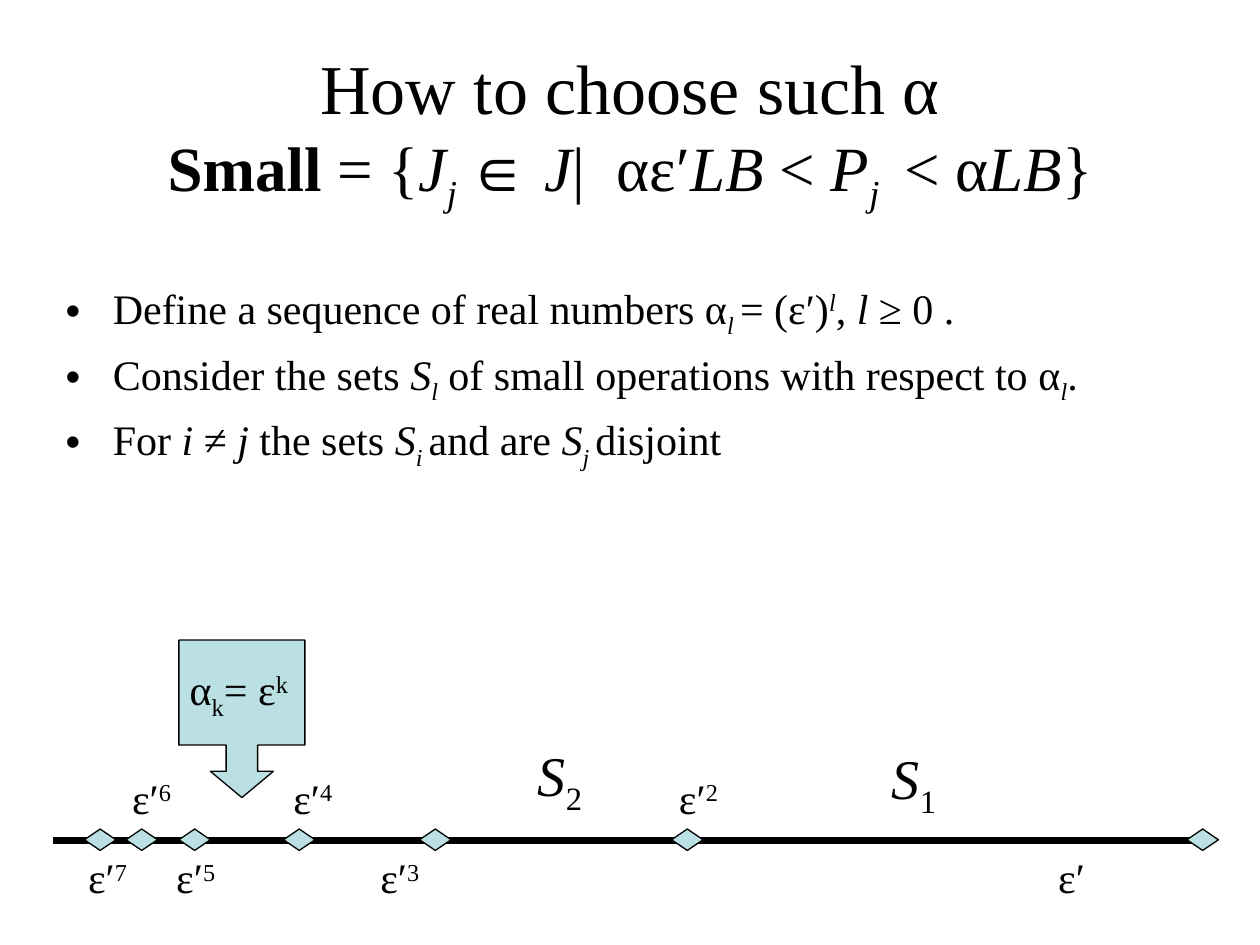
from lxml import etree
from pptx import Presentation
from pptx.dml.color import RGBColor
from pptx.enum.shapes import MSO_CONNECTOR, MSO_SHAPE
from pptx.enum.text import MSO_ANCHOR, MSO_AUTO_SIZE, PP_ALIGN
from pptx.oxml.ns import qn
from pptx.util import Inches, Pt

BLACK = RGBColor(0x00, 0x00, 0x00)
PALE_TEAL = RGBColor(0xBB, 0xE0, 0xE3)
SERIF = "Times New Roman"
STRAIGHT = MSO_CONNECTOR.STRAIGHT
DIAMOND = MSO_SHAPE.FLOWCHART_DECISION
CALLOUT = MSO_SHAPE.DOWN_ARROW_CALLOUT
MIDDLE, TOP = MSO_ANCHOR.MIDDLE, MSO_ANCHOR.TOP
CENTER, LEFT = PP_ALIGN.CENTER, PP_ALIGN.LEFT
NO_FIT = MSO_AUTO_SIZE.NONE
SUB, SUP = -25, 30
INSET = 0.1

FORMULA = [("Small ", {"bold": True}), ("= {", {}), ("J", {"italic": True}),
           ("j ", {"italic": True, "base": SUB}), ("∈ ", {}),
           ("J", {"italic": True}), ("|  αε′", {}), ("LB", {"italic": True}),
           (" < ", {}), ("P", {"italic": True}),
           ("j ", {"italic": True, "base": SUB}), (" < α", {}),
           ("LB", {"italic": True}), ("}", {})]
BULLETS = [
    [("Define a sequence of real numbers α", {}),
     ("l ", {"italic": True, "base": SUB}), ("= (ε′)", {}),
     ("l", {"italic": True, "base": SUP}), (", ", {}),
     ("l", {"italic": True}), (" ≥ 0 .", {})],
    [("Consider the sets ", {}), ("S", {"italic": True}),
     ("l", {"italic": True, "base": SUB}),
     (" of small operations with respect to α", {}),
     ("l", {"italic": True, "base": SUB}), (".", {})],
    [("For ", {}), ("i ", {"italic": True}), ("≠ ", {}),
     ("j", {"italic": True}), (" the sets ", {}), ("S", {"italic": True}),
     ("i ", {"italic": True, "base": SUB}), ("and are ", {}),
     ("S", {"italic": True}), ("j ", {"italic": True, "base": SUB}),
     ("disjoint", {})],
]
MARKS = [0, 0.33, 0.75, 1.58, 2.66, 4.66, 8.75]
LABELS_ABOVE = [("6", 1.05), ("4", 2.33), ("2", 5.39)]
LABELS_BELOW = [("7", 0.7), ("5", 1.4), ("3", 3.02), ("", 8.4)]


def add_run(paragraph, text, size=24, bold=False, italic=False, base=0):
    """Append one formatted run, raised or lowered by base percent."""
    run = paragraph.add_run()
    run.text = text
    run.font.name = SERIF
    run.font.size = Pt(size)
    run.font.bold = bold
    run.font.italic = italic
    run.font.color.rgb = BLACK
    if base:
        run.font._element.set("baseline", str(base * 1000))


def add_runs(paragraph, parts, size=24):
    """Append a list of (text, format) parts."""
    for text, style in parts:
        add_run(paragraph, text, size, **style)


def place(shape, left, top, width, height):
    """Move a placeholder to a box given in inches."""
    shape.left, shape.top = Inches(left), Inches(top)
    shape.width, shape.height = Inches(width), Inches(height)


def fill_title(title, left, top, width, height):
    """Write the heading and the definition of the small set."""
    place(title, left, top, width, height)
    frame = title.text_frame
    frame.auto_size = NO_FIT
    frame.vertical_anchor = MIDDLE
    paragraph = frame.paragraphs[0]
    paragraph.alignment = CENTER
    add_run(paragraph, "How to choose such α", 40)
    paragraph.add_line_break()
    add_runs(paragraph, FORMULA, 36)


def fill_body(body, left, top, width, height):
    """Write the bullet list."""
    place(body, left, top, width, height)
    frame = body.text_frame
    frame.auto_size = NO_FIT
    frame.vertical_anchor = TOP
    frame.margin_top = Inches(0.49)
    for index, parts in enumerate(BULLETS):
        paragraph = frame.add_paragraph() if index else frame.paragraphs[0]
        add_runs(paragraph, parts)


def add_label(slide, left, top, width, height, parts, size=24):
    """Add a short label whose text starts at left."""
    box = slide.shapes.add_textbox(Inches(left - INSET), Inches(top),
                                   Inches(width), Inches(height))
    box.text_frame.word_wrap = False
    paragraph = box.text_frame.paragraphs[0]
    paragraph.alignment = LEFT
    add_runs(paragraph, parts, size)


def add_filled_shape(slide, kind, left, top, width, height):
    """Add a pale teal shape with a thin black outline."""
    shape = slide.shapes.add_shape(kind, Inches(left), Inches(top),
                                   Inches(width), Inches(height))
    shape.shadow.inherit = False
    shape.fill.solid()
    shape.fill.fore_color.rgb = PALE_TEAL
    shape.line.color.rgb = BLACK
    shape.line.width = Pt(0.75)
    return shape


def add_number_line(slide, left, top, width):
    """Draw the axis, its marks, and the labels around it."""
    axis = slide.shapes.add_connector(STRAIGHT, Inches(left), Inches(top),
                                      Inches(left + width), Inches(top))
    axis.line.color.rgb = BLACK
    axis.line.width = Pt(4)
    etree.SubElement(axis._element.spPr, qn("a:effectLst"))
    for offset in MARKS:
        add_filled_shape(slide, DIAMOND, left + 0.25 + offset, top - 0.09,
                         0.25, 0.17)
    for labels, label_top in ((LABELS_ABOVE, top - 0.59),
                              (LABELS_BELOW, top + 0.04)):
        for power, label_left in labels:
            parts = [("ε′", {})]
            if power:
                parts.append((power, {"base": SUP}))
            add_label(slide, label_left, label_top, 0.55, 0.5, parts)
    for number, label_left, label_top in (("1", 7.08, top - 0.82),
                                          ("2", 4.27, top - 0.84)):
        add_label(slide, label_left, label_top, 0.57, 0.63,
                  [("S", {"italic": True}), (number, {"base": SUB})], 32)


def add_alpha_callout(slide, left, top, width, height):
    """Add the arrow callout that points at the chosen interval."""
    callout = add_filled_shape(slide, CALLOUT, left, top, width, height)
    for index, value in enumerate((0.25, 0.25, 0.208, 0.667)):
        callout.adjustments[index] = value
    frame = callout.text_frame
    frame.word_wrap = False
    frame.vertical_anchor = MIDDLE
    paragraph = frame.paragraphs[0]
    paragraph.alignment = CENTER
    add_runs(paragraph, [("α", {}), ("k", {"base": SUB}), ("= ε", {}),
                         ("k ", {"base": SUP})])


def main():
    """Build the slide and save it."""
    deck = Presentation()
    deck.slide_width, deck.slide_height = Inches(10), Inches(7.5)
    slide = deck.slides.add_slide(deck.slide_layouts[1])
    fill_title(slide.shapes.title, 0.5, 0.3, 9, 1.45)
    fill_body(slide.placeholders[1], 0.42, 1.75, 9, 2.92)
    add_number_line(slide, 0.42, 6.67, 9.16)
    add_alpha_callout(slide, 1.42, 5.08, 1, 1.25)
    deck.save("out.pptx")


if __name__ == "__main__":
    main()
